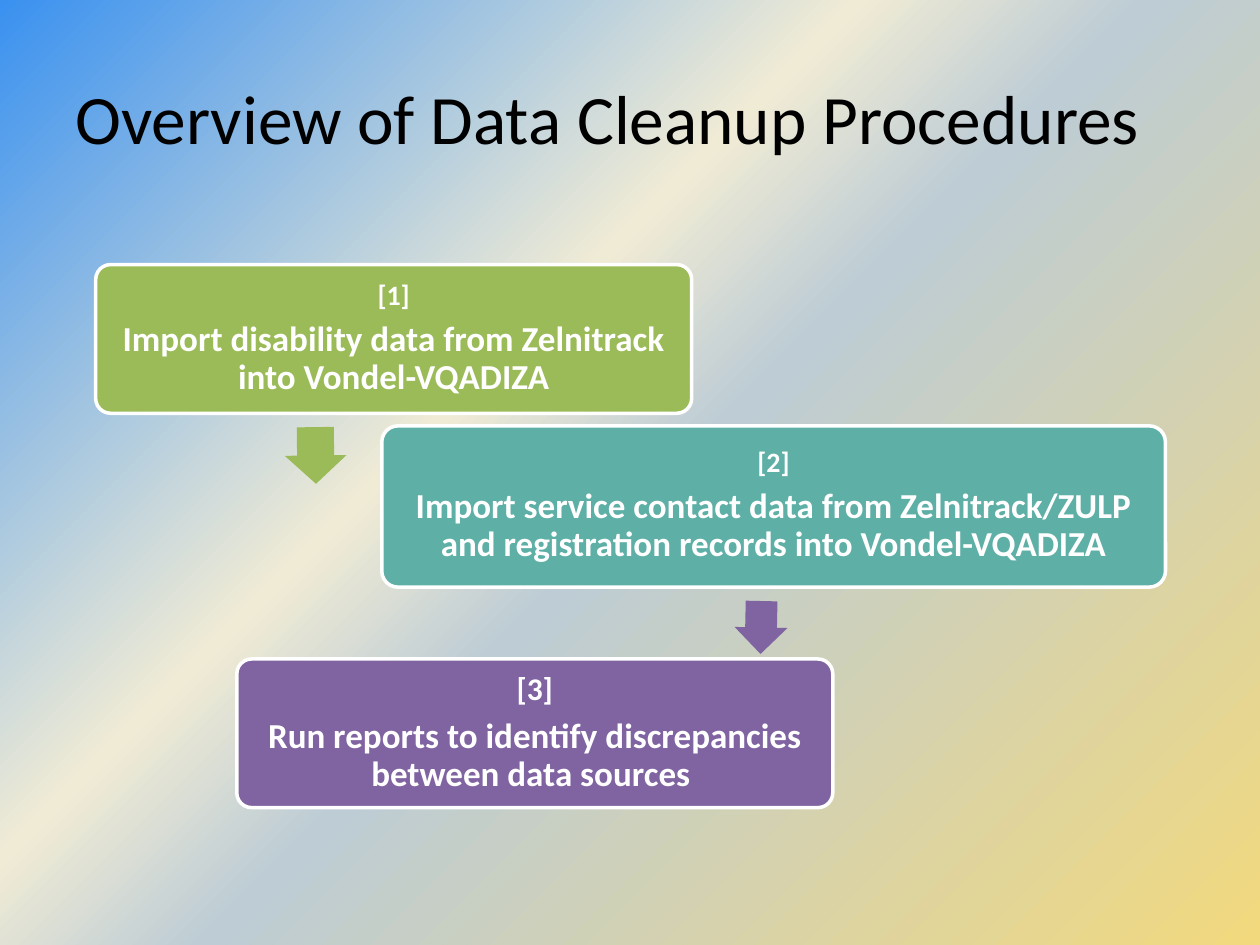
"""Build the data cleanup overview slide."""
import copy
import pptx
import pptx.dml.color
import pptx.enum.shapes
import pptx.enum.text
import pptx.oxml.ns
import pptx.util

Inches, Pt = pptx.util.Inches, pptx.util.Pt
Kind = pptx.enum.shapes.MSO_SHAPE
Align = pptx.enum.text.PP_ALIGN
Anchor = pptx.enum.text.MSO_ANCHOR
qn = pptx.oxml.ns.qn

COLORS = {"green": "9BBB59", "teal": "5EAFA6", "purple": "8064A2",
          "white": "FFFFFF", "black": "000000"}
STOPS = [(0, "3A91F0"), (39, "F0EBD5"), (52, "BDCCD5"), (100, "F2D97E")]
STEPS = [
    (0.76, 2.1, 4.73, 1.18, "green", 16,
     "Import disability data from Zelnitrack into Vondel-VQADIZA"),
    (3.03, 3.38, 6.22, 1.28, "teal", 16,
     "Import service contact data from Zelnitrack/ZULP "
     "and registration records into Vondel-VQADIZA"),
    (1.88, 5.23, 4.73, 1.18, "purple", 18,
     "Run reports to identify discrepancies between data sources "),
]
ARROWS = [(2.28, 3.37, 0.45, 0.49, 89.3, "green"),
          (5.83, 4.77, 0.42, 0.42, 91.2, "purple")]


def write(par, text, size, color, bold, align):
    par.alignment = align
    run = par.add_run()
    run.text = text
    form = {"name": "Calibri", "size": Pt(size), "bold": bold}
    for key, value in form.items():
        setattr(run.font, key, value)
    run.font.color.rgb = pptx.dml.color.RGBColor.from_string(COLORS[color])


def draw(kind, box, color, adjust):
    shape = slide.shapes.add_shape(kind, *map(Inches, box))
    shape.shadow.inherit = False
    shape.fill.solid()
    shape.fill.fore_color.rgb = pptx.dml.color.RGBColor.from_string(COLORS[color])
    for i, value in enumerate(adjust):
        shape.adjustments[i] = value
    return shape


deck = pptx.Presentation()
deck.slide_width, deck.slide_height = Inches(10), Inches(7.5)
slide = deck.slides.add_slide(deck.slide_layouts[6])

back = slide.background.fill
back.gradient()
back.gradient_angle = 315
stops = slide.element.find(".//" + qn("a:gsLst"))
base = copy.deepcopy(stops[0])
for old in list(stops):
    stops.remove(old)
for _ in STOPS:
    stops.append(copy.deepcopy(base))
for stop, (place, color) in zip(back.gradient_stops, STOPS):
    stop.position = place / 100
    stop.color.rgb = pptx.dml.color.RGBColor.from_string(color)

title = slide.shapes.add_textbox(*map(Inches, (0.5, 0.3, 9, 1.25))).text_frame
title.word_wrap = True
title.vertical_anchor = Anchor.MIDDLE
write(title.paragraphs[0], "Overview of Data Cleanup Procedures",
      39.6, "black", False, Align.LEFT)

for num, (*box, color, size, text) in enumerate(STEPS, 1):
    card = draw(Kind.ROUNDED_RECTANGLE, box, color, [0.1])
    card.line.color.rgb = pptx.dml.color.RGBColor.from_string(COLORS["white"])
    card.line.width = Pt(2)
    frame = card.text_frame
    form = {"word_wrap": True, "vertical_anchor": Anchor.MIDDLE}
    for side in ("left", "right", "top", "bottom"):
        form["margin_" + side] = Inches(0.1)
    for key, value in form.items():
        setattr(frame, key, value)
    pars = [frame.paragraphs[0], frame.add_paragraph()]
    for par, words, points in zip(pars, (f"[{num}]", text), (size, 20)):
        write(par, words, points, "white", True, Align.CENTER)
        par.line_spacing = 0.9
        par.space_after = Pt(0.35 * points)

for *box, turn, color in ARROWS:
    arrow = draw(Kind.RIGHT_ARROW, box, color, [0.6, 0.5])
    arrow.line.fill.background()
    arrow.rotation = turn

deck.save("out.pptx")
